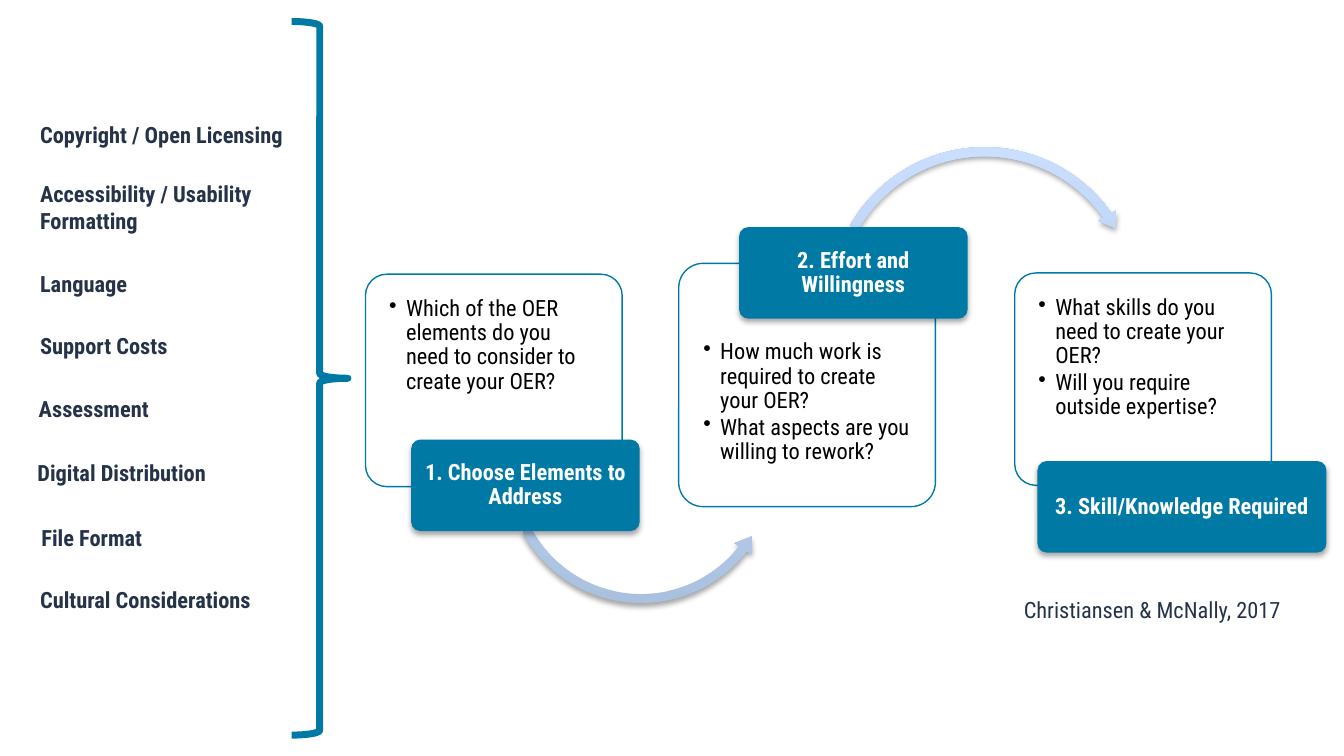
from lxml import etree
from pptx import Presentation
from pptx.dml.color import RGBColor
from pptx.enum.shapes import MSO_SHAPE as Preset
from pptx.enum.text import MSO_ANCHOR as Anchor, PP_ALIGN as Align
from pptx.oxml.ns import qn
from pptx.util import Pt

FONT = "Roboto Condensed"
TEAL, NAVY, WHITE, BLACK = "007AA5", "263248", "FFFFFF", "000000"
ARROW_DARK, ARROW_LIGHT = "A9C0DF", "CADFFF"

ELEMENTS = [  # text, left, top
    ("Copyright / Open Licensing", 14.4, 61.2),
    ("Accessibility / Usability Formatting", 14.4, 92.9),
    ("Language", 14.4, 141.1),
    ("Support Costs", 14.4, 174.2),
    ("Assessment", 13.7, 208.1),
    ("Digital Distribution", 13, 242.6),
    ("File Format", 15.1, 277.2),
    ("Cultural Considerations", 14.4, 310.3),
]

# Label and arrow boxes are measured from the corner of their card.
STEPS = [
    dict(box=(195.8, 146.9, 137.5, 113.8), top_inset=9,
         questions=["Which of the OER elements do you need to consider to create your OER?"],
         label="1. Choose Elements to Address", label_box=(24.5, 88.6, 122.4, 49),
         arrow=(Preset.LEFT_CIRCULAR_ARROW, (72.7, 29.5, 149.8, 149.8),
                (0.032, 3.948, 22.739, 91.281, 0.037))),
    dict(box=(363.6, 141.1, 137.5, 130.3), top_inset=37.5,
         questions=["How much work is required to create your OER?",
                    "What aspects are you willing to rework?"],
         label="2. Effort and Willingness", label_box=(32.4, -19.4, 122.4, 49),
         arrow=(Preset.CIRCULAR_ARROW, (77.8, -65.5, 172.1, 172.1),
                (0.028, 3.407, 194.93, 125.847, 0.033))),
    dict(box=(543.6, 146.2, 137.5, 113.8), top_inset=9,
         questions=["What skills do you need to create your OER?",
                    "Will you require outside expertise?"],
         label="3. Skill/Knowledge Required", label_box=(12.2, 100.8, 154.8, 49),
         arrow=None),
]


def rgb(value):
    return RGBColor.from_string(value)


def add_preset(slide, preset, box, fill=None, line=None, weight=0.75):
    shape = slide.shapes.add_shape(preset, *map(Pt, box))
    shape.shadow.inherit = False
    if fill:
        shape.fill.solid()
        shape.fill.fore_color.rgb = rgb(fill)
    else:
        shape.fill.background()
    if line:
        shape.line.color.rgb = rgb(line)
        shape.line.width = Pt(weight)
    else:
        shape.line.fill.background()
    return shape


def write(shape, texts, color, bold=False, insets=(7.2, 3.6, 7.2, 3.6),
          anchor=Anchor.TOP, **paragraph_format):
    frame = shape.text_frame
    frame_format = dict(zip(("margin_left", "margin_top", "margin_right", "margin_bottom"),
                            map(Pt, insets)), word_wrap=True, vertical_anchor=anchor)
    for name, value in frame_format.items():
        setattr(frame, name, value)
    frame.text = "\n".join(texts)
    for paragraph in frame.paragraphs:
        for name, value in {"alignment": Align.LEFT, **paragraph_format}.items():
            setattr(paragraph, name, value)
        for name, value in dict(name=FONT, size=Pt(12), bold=bold).items():
            setattr(paragraph.font, name, value)
        paragraph.font.color.rgb = rgb(color)


def add_bullets(shape):
    for paragraph in shape.text_frame.paragraphs:
        properties = paragraph._p.get_or_add_pPr()
        properties.set("marL", str(Pt(9)))
        properties.set("indent", str(-Pt(9)))
        bullet = etree.Element(qn("a:buChar"), char="•")
        spacing_tags = (qn("a:lnSpc"), qn("a:spcBef"), qn("a:spcAft"))
        position = sum(child.tag in spacing_tags for child in properties)
        properties.insert(position, bullet)


def add_shadow(shape):
    effects = shape._element.spPr.find(qn("a:effectLst"))
    shadow = etree.SubElement(effects, qn("a:outerShdw"), blurRad=str(Pt(3.1)),
                              dist=str(Pt(1.8)), dir="5400000", rotWithShape="0")
    color = etree.SubElement(shadow, qn("a:srgbClr"), val=BLACK)
    etree.SubElement(color, qn("a:alpha"), val="35000")


def add_arrow(slide, preset, box, adjustments):
    arrow = add_preset(slide, preset, box)
    for index, value in enumerate(adjustments):
        arrow.adjustments[index] = value
    arrow.fill.gradient()
    arrow.fill.gradient_angle = 90
    for stop, color in zip(arrow.fill.gradient_stops, (ARROW_DARK, ARROW_LIGHT)):
        stop.color.rgb = rgb(color)
    add_shadow(arrow)


def add_step(slide, box, top_inset, questions, label, label_box, arrow):
    """Card of questions, its label, and the arrow to the next step."""
    left, top = box[:2]

    def within(part):
        return (left + part[0], top + part[1], *part[2:])

    card = add_preset(slide, Preset.ROUNDED_RECTANGLE, box, WHITE, TEAL)
    card.adjustments[0] = 0.1
    write(card, questions, BLACK, insets=(9.4, top_inset, 9.4, 9),
          line_spacing=0.9, space_after=Pt(1.5))
    add_bullets(card)
    if arrow:
        preset, arrow_box, adjustments = arrow
        add_arrow(slide, preset, within(arrow_box), adjustments)
    tag = add_preset(slide, Preset.ROUNDED_RECTANGLE, within(label_box), TEAL)
    tag.adjustments[0] = 0.1
    add_shadow(tag)
    write(tag, [label], WHITE, bold=True, insets=(2, 2, 2, 2), anchor=Anchor.MIDDLE,
          alignment=Align.CENTER, line_spacing=0.9)


def add_text(slide, text, box, bold=False):
    write(slide.shapes.add_textbox(*map(Pt, box)), [text], NAVY, bold)


def add_elements(slide, brace_box):
    """List of OER elements gathered by a brace."""
    for text, left, top in ELEMENTS:
        add_text(slide, text, (left, top, 150, 21.6), bold=True)
    add_preset(slide, Preset.RIGHT_BRACE, brace_box, line=TEAL, weight=3.75)


def main():
    deck = Presentation()
    deck.slide_width, deck.slide_height = Pt(720), Pt(405)
    slide = deck.slides.add_slide(deck.slide_layouts[6])
    for step in STEPS:
        add_step(slide, **step)
    add_elements(slide, brace_box=(156.2, 11.5, 30.2, 382.3))
    add_text(slide, "Christiansen & McNally, 2017", (541.4, 316.1, 160, 21.6))
    deck.save("out.pptx")


if __name__ == "__main__":
    main()
